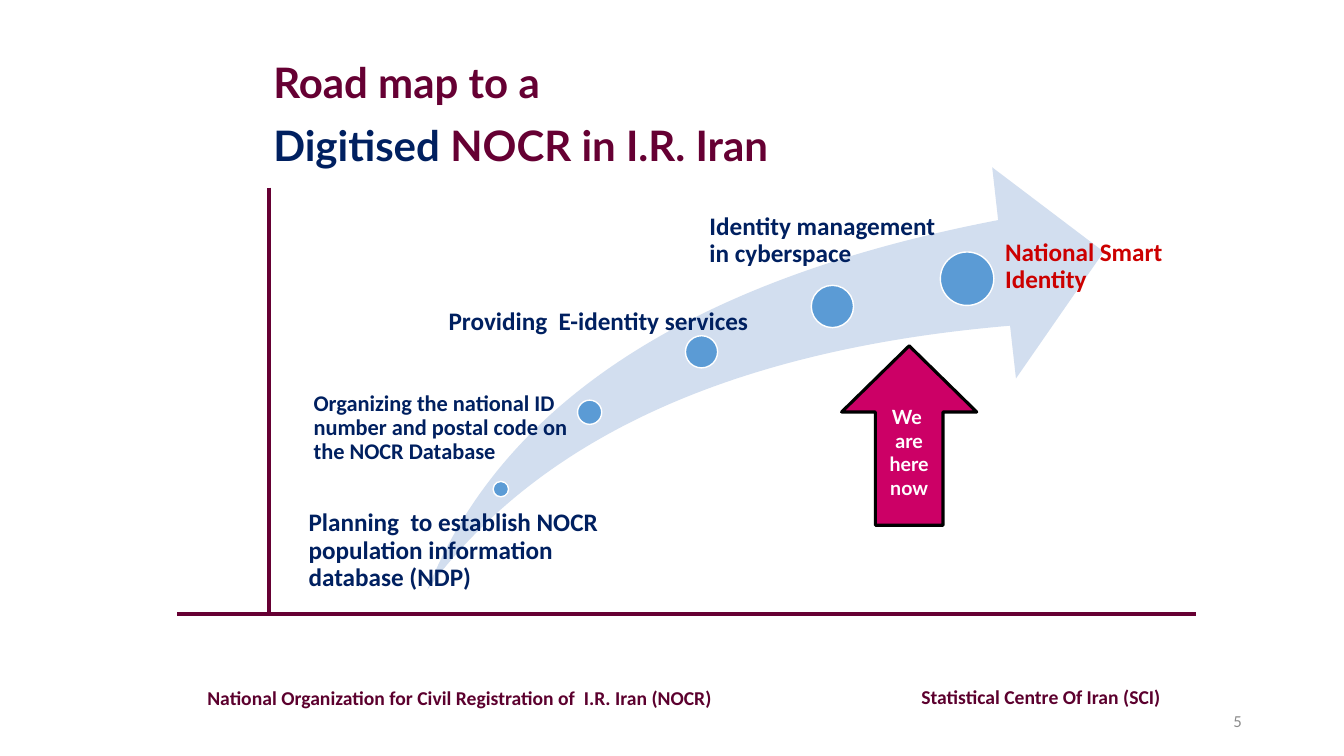
"""Build the road map slide for a digitised civil registration office."""
from dataclasses import dataclass

from pptx import Presentation
from pptx.dml.color import RGBColor as RGB
from pptx.enum.shapes import MSO_CONNECTOR, MSO_SHAPE
from pptx.enum.text import MSO_ANCHOR as ANCHOR, PP_ALIGN as ALIGN
from pptx.oxml.ns import qn
from pptx.util import Pt


@dataclass(frozen=True)
class Theme:
    """Fonts, colours and type sizes of the slide."""
    head: str = "Lato"
    body: str = "Calibri"
    plum: str = "660033"
    wine: str = "5C002E"
    navy: str = "002060"
    red: str = "CC0000"
    pink: str = "CC0066"
    sky: str = "D2DEEF"
    blue: str = "5B9BD5"
    grey: str = "8C8C8C"
    white: str = "FFFFFF"
    black: str = "000000"
    title: int = 30
    label: int = 18
    label_small: int = 16
    note: int = 14
    number: int = 12


T = Theme()

MILESTONES = [
    ((357.8, 349.4, 11), (214.6, 364.3, 214.8, 48.2), 5.8, T.label, T.navy,
     "Planning  to establish NOCR population information database (NDP)"),
    ((421.2, 294.5, 17.3), (214.6, 280.1, 203, 56.9), 9.4, T.label_small, T.navy,
     "Organizing the national ID number and postal code on the NOCR Database"),
    ((501.1, 251.3, 23), (308.2, 220.3, 231.8, 23.8), 12.2, T.label, T.navy,
     "Providing  E-identity services"),
    ((594.6, 218.9, 30.2), (491, 152.6, 180.7, 42.5), 15.8, T.label, T.navy,
     "Identity management in cyberspace"),
    ((690.8, 199.1, 38.2), (697.7, 171.4, 167, 52.6), 20.2, T.label, T.red,
     "National Smart Identity"),
]


def apply(target, values):
    """Set each attribute of target from a dict."""
    for name, value in values.items():
        setattr(target, name, value)


def add_run(p, text, size, color, font=T.body, bold=True):
    """Append a formatted run to a paragraph."""
    r = p.add_run()
    r.text = text
    apply(r.font, {"name": font, "size": Pt(size), "bold": bold})
    r.font.color.rgb = RGB.from_string(color)


def add_text(s, box, text, size, color, bold=True, frame=None, para=None):
    """Add a wrapping text box holding one paragraph."""
    tf = s.shapes.add_textbox(*map(Pt, box)).text_frame
    apply(tf, {"word_wrap": True, **(frame or {})})
    p = tf.paragraphs[0]
    apply(p, para or {})
    add_run(p, text, size, color, bold=bold)


def add_shape(s, kind, box, fill, line=None, width=0, adjust=()):
    """Add a flat preset shape, with an outline if a line colour is given."""
    sp = s.shapes.add_shape(kind, *map(Pt, box))
    sp.shadow.inherit = False
    sp.fill.solid()
    sp.fill.fore_color.rgb = RGB.from_string(fill)
    if line:
        sp.line.color.rgb = RGB.from_string(line)
        sp.line.width = Pt(width)
    else:
        sp.line.fill.background()
    for i, value in enumerate(adjust):
        sp.adjustments[i] = value
    return sp


def add_axis(s, *ends):
    """Add a straight axis line without a shadow."""
    c = s.shapes.add_connector(MSO_CONNECTOR.STRAIGHT, *map(Pt, ends))
    c.line.color.rgb = RGB.from_string(T.plum)
    c.line.width = Pt(3)
    spPr = c._element.spPr
    spPr.append(spPr.makeelement(qn("a:effectLst"), {}))


def add_title(s):
    """Fill and place the title placeholder."""
    sp = s.shapes.title
    apply(sp, {"left": Pt(188), "top": Pt(33), "width": Pt(645), "height": Pt(86.4)})
    tf = sp.text_frame
    apply(tf, {"word_wrap": True, "vertical_anchor": ANCHOR.MIDDLE})
    p = tf.paragraphs[0]
    apply(p, {"alignment": ALIGN.LEFT, "line_spacing": 1.25})
    add_run(p, "Road map to a ", T.title, T.plum, T.head)
    p.add_line_break()
    add_run(p, "Digitised", T.title, T.navy, T.head)
    add_run(p, " NOCR in I.R. Iran", T.title, T.plum, T.head)


def add_milestone(s, dot, box, inset, size, color, text):
    """Add a dot on the swoosh and its label."""
    x, y, d = dot
    add_shape(s, MSO_SHAPE.OVAL, (x - d / 2, y - d / 2, d, d), T.blue, T.white, 1)
    frame = {"margin_left": Pt(inset), "margin_top": 0,
             "margin_right": 0, "margin_bottom": 0}
    add_text(s, box, text, size, color, frame=frame,
             para={"alignment": ALIGN.LEFT, "line_spacing": 0.9})


def add_here_arrow(s):
    """Add the arrow that marks the present stage."""
    sp = add_shape(s, MSO_SHAPE.UP_ARROW, (601.2, 247, 96.5, 128.2), T.pink,
                   T.black, 2.25, (0.5, 0.49))
    tf = sp.text_frame
    apply(tf, {"word_wrap": True, "vertical_anchor": ANCHOR.MIDDLE})
    p = tf.paragraphs[0]
    p.alignment = ALIGN.CENTER
    add_run(p, "We  are here now", T.note, T.white, T.head)


def main():
    """Compose and save the slide."""
    prs = Presentation()
    apply(prs, {"slide_width": Pt(960), "slide_height": Pt(540)})
    s = prs.slides.add_slide(prs.slide_layouts[5])
    add_text(s, (141, 486.7, 471.6, 41),
             "National Organization for Civil Registration of  I.R. Iran (NOCR)",
             T.note, T.wine)
    add_text(s, (651, 486, 191, 41), "Statistical Centre Of Iran (SCI)",
             T.note, T.wine)
    add_axis(s, 192.2, 134, 192.2, 438.5)
    add_axis(s, 126.7, 438.5, 854, 438.5)
    add_title(s)
    add_shape(s, MSO_SHAPE.SWOOSH_ARROW, (305.3, 119.5, 483.1, 301.7), T.sky,
              adjust=(0.25, 0.25))
    for milestone in MILESTONES:
        add_milestone(s, *milestone)
    add_text(s, (678.2, 500.4, 216, 28.8), "5", T.number, T.grey, bold=False,
             frame={"vertical_anchor": ANCHOR.MIDDLE},
             para={"alignment": ALIGN.RIGHT})
    add_here_arrow(s)
    prs.save("out.pptx")


if __name__ == "__main__":
    main()
